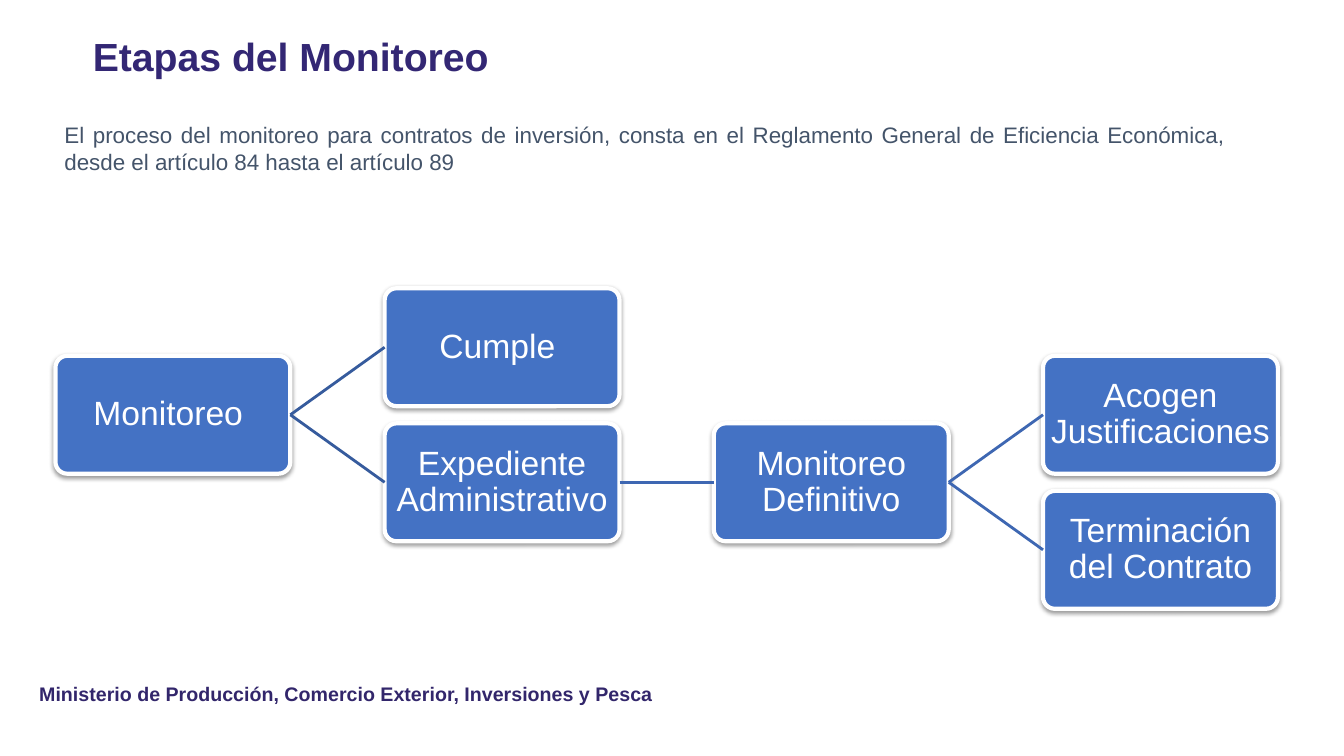
from lxml import etree
from pptx import Presentation
from pptx.dml.color import RGBColor
from pptx.enum.shapes import MSO_CONNECTOR as Connector, MSO_SHAPE as Shape
from pptx.enum.text import MSO_ANCHOR as Anchor, PP_ALIGN as Align
from pptx.oxml import parse_xml
from pptx.oxml.ns import nsdecls, qn
from pptx.util import Inches, Pt

COLORS = {
    "title": "332774",
    "footer": "32266B",
    "body": "44546A",
    "box": "4472C4",
    "white": "FFFFFF",
    "first_link": "365B9D",
    "later_link": "3E67B2",
}
LEFT_SITE, RIGHT_SITE = 1, 3

# Stage: (column, half-row step, text)
STAGES = {
    "monitoring": (0, 1, "Monitoreo "),
    "complies": (1, 0, "Cumple "),
    "file": (1, 2, "Expediente Administrativo"),
    "final": (2, 2, "Monitoreo Definitivo"),
    "accepted": (3, 1, "Acogen Justificaciones "),
    "ended": (3, 3, "Terminación del Contrato"),
}
LINKS = [
    ("monitoring", "complies", "first_link"),
    ("monitoring", "file", "first_link"),
    ("file", "final", "later_link"),
    ("final", "accepted", "later_link"),
    ("final", "ended", "later_link"),
]


def rgb(name):
    return RGBColor.from_string(COLORS[name])


class SlideBuilder:
    font_name = "Arial"

    def __init__(self, slide):
        self.slide = slide

    def set_text(self, shape, text, size, color, bold=False, align=Align.LEFT,
                 anchor=Anchor.TOP, spacing=1.0):
        frame = shape.text_frame
        frame.word_wrap = True
        frame.vertical_anchor = anchor
        frame.text = text
        paragraph = frame.paragraphs[0]
        paragraph.alignment = align
        paragraph.line_spacing = spacing
        font = paragraph.runs[0].font
        font.name, font.size, font.bold = self.font_name, Pt(size), bold
        font.color.rgb = rgb(color)

    def title(self, text, left, top, width, height):
        title = self.slide.shapes.title
        title.left, title.top = Inches(left), Inches(top)
        title.width, title.height = Inches(width), Inches(height)
        self.set_text(title, text, 28, "title", bold=True,
                      anchor=Anchor.MIDDLE, spacing=0.9)

    def text(self, text, left, top, width, height, size, color, **style):
        box = self.slide.shapes.add_textbox(
            Inches(left), Inches(top), Inches(width), Inches(height))
        self.set_text(box, text, size, color, **style)

    def stage(self, column, step, text):
        box = self.slide.shapes.add_shape(
            Shape.ROUNDED_RECTANGLE,
            Inches(0.55 + 3.265 * column), Inches(2.86 + 0.67 * step),
            Inches(2.33), Inches(1.17))
        box.adjustments[0] = 0.1
        box.fill.solid()
        box.fill.fore_color.rgb = rgb("box")
        box.line.color.rgb = rgb("white")
        box.line.width = Pt(3)
        self.soft_shadow(box)
        frame = box.text_frame
        frame.margin_left = frame.margin_right = Inches(0.02)
        frame.margin_top = frame.margin_bottom = Inches(0.02)
        self.set_text(box, text, 24, "white", align=Align.CENTER,
                      anchor=Anchor.MIDDLE, spacing=0.9)
        return box

    def soft_shadow(self, shape):
        """Replace the theme shadow with a faint one straight below."""
        shape.shadow.inherit = False
        effects = shape._element.spPr.find(qn("a:effectLst"))
        effects.append(parse_xml(
            f'<a:outerShdw {nsdecls("a")} blurRad="{Pt(3.1)}" dist="{Pt(1.6)}" '
            'dir="5400000" rotWithShape="0"><a:srgbClr val="000000">'
            '<a:alpha val="38000"/></a:srgbClr></a:outerShdw>'))

    def link(self, source, target, color):
        line = self.slide.shapes.add_connector(Connector.STRAIGHT, 0, 0, 0, 0)
        line.begin_connect(source, RIGHT_SITE)
        line.end_connect(target, LEFT_SITE)
        line.line.color.rgb = rgb(color)
        line.line.width = Pt(2)
        etree.SubElement(line._element.spPr, qn("a:effectLst"))


def main():
    deck = Presentation()
    deck.slide_width, deck.slide_height = Inches(13.33), Inches(7.5)
    page = SlideBuilder(deck.slides.add_slide(deck.slide_layouts[5]))

    page.title("Etapas del Monitoreo", 0.82, 0.18, 11.5, 0.81)
    page.text("El proceso del monitoreo para contratos de inversión, consta en "
              "el Reglamento General de Eficiencia Económica, desde el artículo "
              "84 hasta el artículo 89",
              0.54, 1.15, 11.71, 0.64, 16, "body", align=Align.JUSTIFY)

    boxes = {name: page.stage(*stage) for name, stage in STAGES.items()}
    for source, target, color in LINKS:
        page.link(boxes[source], boxes[target], color)

    page.text("Ministerio de Producción, Comercio Exterior, Inversiones y Pesca",
              0.29, 6.71, 6.99, 0.34, 14, "footer", bold=True,
              anchor=Anchor.MIDDLE)
    deck.save("out.pptx")


if __name__ == "__main__":
    main()
